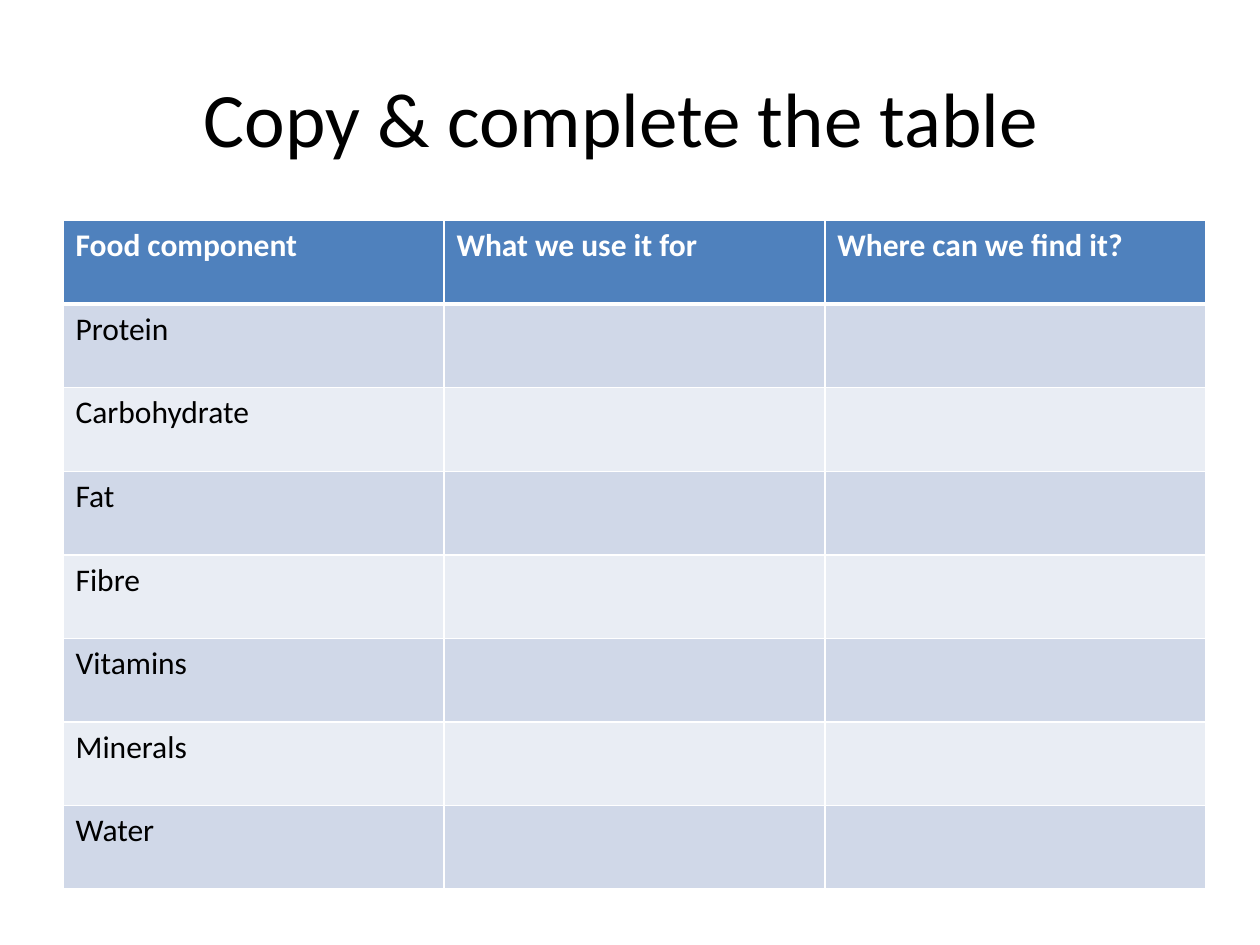
from lxml import etree
from pptx import Presentation
from pptx.dml.color import RGBColor
from pptx.enum import text
from pptx.oxml import ns
from pptx.util import Inches, Pt

FONT = "Calibri"
BLACK = RGBColor(0x00, 0x00, 0x00)
WHITE = RGBColor(0xFF, 0xFF, 0xFF)
HEADER_BLUE = RGBColor(0x4F, 0x81, 0xBD)
BAND_DARK = RGBColor(0xD0, 0xD8, 0xE8)
BAND_LIGHT = RGBColor(0xE9, 0xED, 0xF4)

HEADINGS = ["Food component", "What we use it for", "Where can we find it?"]
COMPONENTS = ["Protein", "Carbohydrate", "Fat", "Fibre", "Vitamins", "Minerals", "Water"]


def write(paragraph, words, color, **formats):
    run = paragraph.add_run()
    run.text = words
    for name, value in {"name": FONT, **formats}.items():
        setattr(run.font, name, value)
    run.font.color.rgb = color


def add_title(slide, words):
    title = slide.shapes.add_textbox(Inches(0.5), Inches(0.3), Inches(9), Inches(1.25))
    frame = title.text_frame
    frame.word_wrap = True
    frame.vertical_anchor = text.MSO_ANCHOR.MIDDLE
    heading = frame.paragraphs[0]
    heading.alignment = text.PP_ALIGN.CENTER
    write(heading, words, BLACK, size=Pt(44))


def set_borders(cell, widths):
    """Draw white borders; widths maps each side to points, in schema order."""
    properties = cell._tc.get_or_add_tcPr()
    for side, width in widths.items():
        line = etree.SubElement(properties, ns.qn(f"a:ln{side}"), w=str(Pt(width)))
        fill = etree.SubElement(line, ns.qn("a:solidFill"))
        etree.SubElement(fill, ns.qn("a:srgbClr"), val=str(WHITE))


def fill_cell(cell, words, fill, color, bold, borders):
    set_borders(cell, borders)
    cell.fill.solid()
    cell.fill.fore_color.rgb = fill
    if words:
        write(cell.text_frame.paragraphs[0], words, color, size=Pt(18), bold=bold)


def add_food_table(slide):
    rows = [HEADINGS] + [[component, "", ""] for component in COMPONENTS]
    food_table = slide.shapes.add_table(
        len(rows), len(HEADINGS), Inches(0.5), Inches(1.75), Inches(9.07), Inches(5.31)
    ).table

    for r, row in enumerate(rows):
        header = r == 0
        band = BAND_DARK if r % 2 else BAND_LIGHT
        # A thick rule separates the header from the body
        borders = {"L": 1, "R": 1, "T": 3 if r == 1 else 1, "B": 3 if header else 1}
        for c, words in enumerate(row):
            fill_cell(
                food_table.cell(r, c),
                words,
                fill=HEADER_BLUE if header else band,
                color=WHITE if header else BLACK,
                bold=header,
                borders=borders,
            )


def main():
    deck = Presentation()
    deck.slide_width, deck.slide_height = Inches(10), Inches(7.5)
    slide = deck.slides.add_slide(deck.slide_layouts[6])

    # Title
    add_title(slide, "Copy & complete the table ")

    # Worksheet table
    add_food_table(slide)

    deck.save("out.pptx")


if __name__ == "__main__":
    main()
